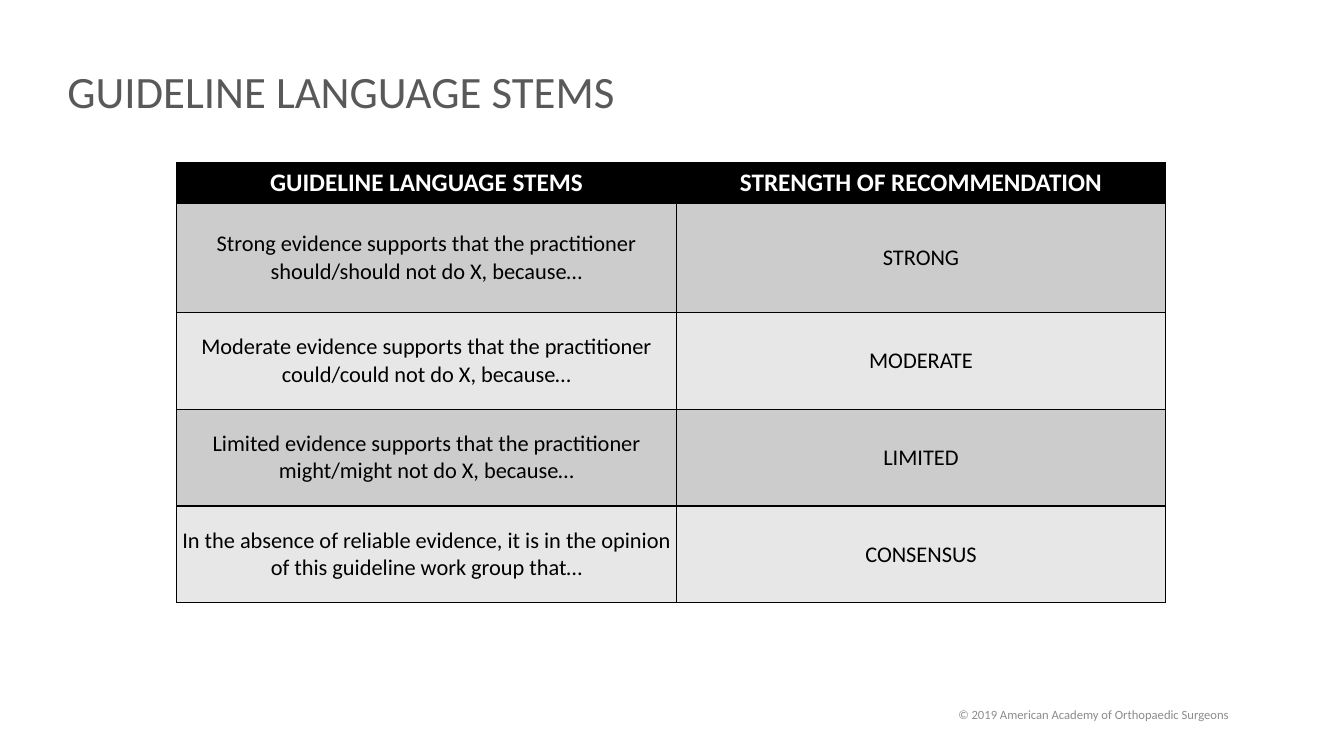
from lxml import etree
from pptx import Presentation
from pptx.dml.color import RGBColor
from pptx.enum.text import MSO_ANCHOR, PP_ALIGN
from pptx.oxml.ns import qn
from pptx.util import Cm, Pt

LEFT, CENTER = PP_ALIGN.LEFT, PP_ALIGN.CENTER
MIDDLE = MSO_ANCHOR.MIDDLE

BLACK = RGBColor(0x00, 0x00, 0x00)
WHITE = RGBColor(0xFF, 0xFF, 0xFF)
TITLE_GREY = RGBColor(0x59, 0x59, 0x59)
FOOTER_GREY = RGBColor(0x8C, 0x8C, 0x8C)
BAND_FILLS = (RGBColor(0xCC, 0xCC, 0xCC), RGBColor(0xE7, 0xE7, 0xE7))

TITLE = "GUIDELINE LANGUAGE STEMS"
COPYRIGHT = "© 2019 American Academy of Orthopaedic Surgeons"
HEADINGS = ("GUIDELINE LANGUAGE STEMS", "STRENGTH OF RECOMMENDATION")
STEMS = [
    ("Strong evidence supports that the practitioner should/should not do X, because…", "STRONG"),
    ("Moderate evidence supports that the practitioner could/could not do X, because…", "MODERATE"),
    ("Limited evidence supports that the practitioner might/might not do X, because…", "LIMITED"),
    ("In the absence of reliable evidence, it is in the opinion of this guideline work group that…",
     "CONSENSUS"),
]
COLUMN_WIDTHS = (12.6, 12.32)
ROW_HEIGHTS = (1.03, 2.74, 2.44, 2.44, 2.44)


def write(frame, text, size, color, bold=False, align=CENTER, line_spacing=None):
    frame.word_wrap = True
    paragraph = frame.paragraphs[0]
    paragraph.alignment = align
    paragraph.line_spacing = line_spacing
    run = paragraph.add_run()
    run.text = text
    run.font.name = "Calibri"
    run.font.size = Pt(size)
    run.font.bold = bold
    run.font.color.rgb = color


def add_label(slide, left, top, width, height, text, **style):
    frame = slide.shapes.add_textbox(Cm(left), Cm(top), Cm(width), Cm(height)).text_frame
    frame.vertical_anchor = MIDDLE
    write(frame, text, **style)


def add_borders(cell):
    properties = cell._tc.get_or_add_tcPr()
    for position, side in enumerate(("a:lnL", "a:lnR", "a:lnT", "a:lnB")):
        border = etree.Element(qn(side), w=str(Pt(1)))
        fill = etree.SubElement(border, qn("a:solidFill"))
        etree.SubElement(fill, qn("a:srgbClr"), val=str(BLACK))
        properties.insert(position, border)


def add_stem_table(slide):
    table = slide.shapes.add_table(
        len(ROW_HEIGHTS), len(COLUMN_WIDTHS), Cm(4.45), Cm(4.1),
        Cm(sum(COLUMN_WIDTHS)), Cm(sum(ROW_HEIGHTS))).table
    for column, width in zip(table.columns, COLUMN_WIDTHS):
        column.width = Cm(width)
    for row, height in zip(table.rows, ROW_HEIGHTS):
        row.height = Cm(height)
    for row_index, entries in enumerate([HEADINGS, *STEMS]):
        for column_index, entry in enumerate(entries):
            cell = table.cell(row_index, column_index)
            cell.vertical_anchor = MIDDLE
            cell.fill.solid()
            if row_index == 0:
                cell.fill.fore_color.rgb = BLACK
                write(cell.text_frame, entry, size=18, color=WHITE, bold=True)
            else:
                cell.fill.fore_color.rgb = BAND_FILLS[(row_index - 1) % 2]
                cell.margin_left = cell.margin_right = Cm(0.13)
                cell.margin_top = cell.margin_bottom = Cm(0.13)
                write(cell.text_frame, entry, size=16, color=BLACK)
            add_borders(cell)


def main():
    deck = Presentation()
    deck.slide_width, deck.slide_height = Cm(33.87), Cm(19.05)
    slide = deck.slides.add_slide(deck.slide_layouts[6])
    add_label(slide, 21.84, 17.5, 11.43, 1.02, COPYRIGHT, size=9, color=FOOTER_GREY)
    add_label(slide, 1.45, 1.42, 30.91, 1.9, TITLE, size=32, color=TITLE_GREY,
              align=LEFT, line_spacing=0.9)
    add_stem_table(slide)
    deck.save("out.pptx")


if __name__ == "__main__":
    main()
